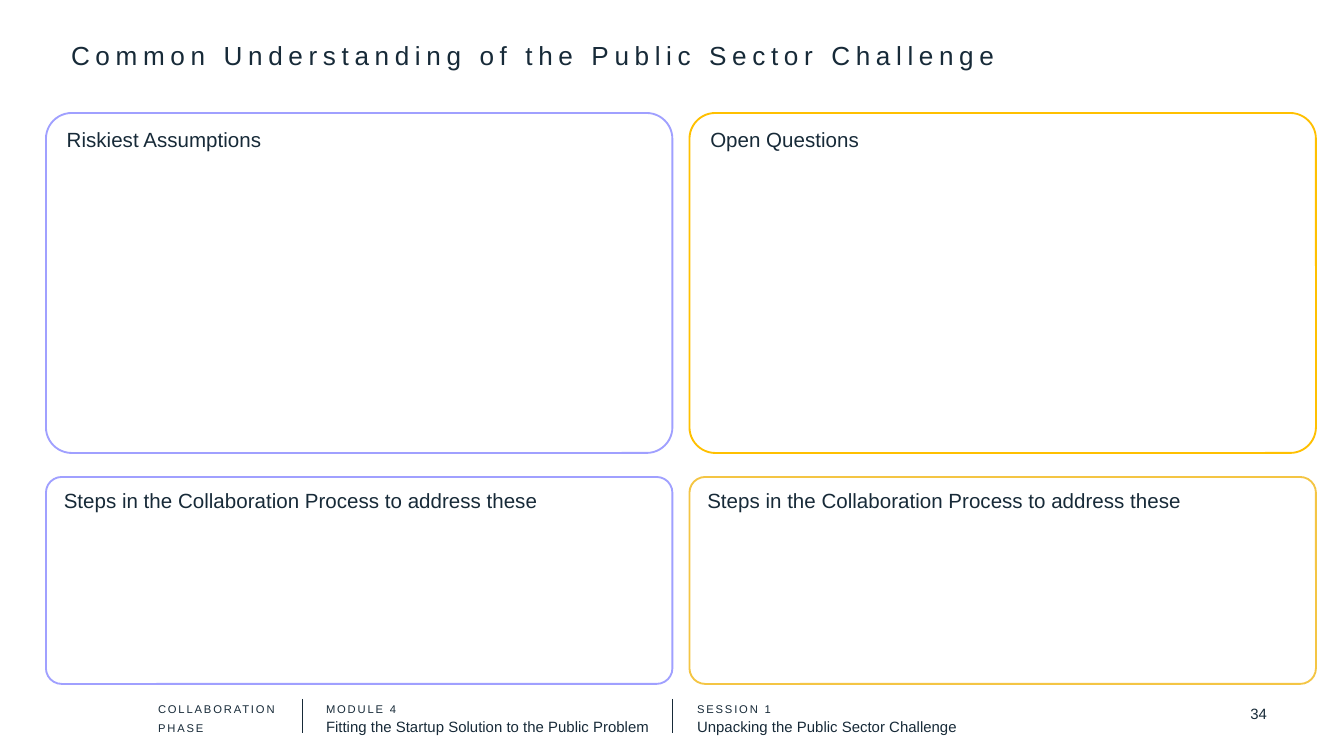
from dataclasses import dataclass

from lxml import etree
from pptx import Presentation
from pptx.dml.color import RGBColor
from pptx.enum.shapes import MSO_CONNECTOR, MSO_SHAPE
from pptx.enum.text import MSO_ANCHOR, PP_ALIGN
from pptx.oxml.ns import qn
from pptx.util import Pt

LINE = MSO_CONNECTOR.STRAIGHT
ROUND = MSO_SHAPE.ROUNDED_RECTANGLE
TOP, MIDDLE = MSO_ANCHOR.TOP, MSO_ANCHOR.MIDDLE
LEFT, RIGHT = PP_ALIGN.LEFT, PP_ALIGN.RIGHT
WIDE, HIGH = 1344, 756


@dataclass(frozen=True)
class Theme:
    font: str = "Arial"
    ink: str = "172A38"
    violet: str = "A0A0FF"
    amber: str = "FFC000"
    gold: str = "F4C544"
    title: int = 14
    card: int = 11
    small: int = 8
    label: int = 6


THEME = Theme()


def emu(px):
    return round(px * 9144000 / WIDE)


def color(code):
    return RGBColor.from_string(code)


def style(para, text, size, track=0, lead=None, align=LEFT):
    """Fill one paragraph; track is letter spacing and lead line height, in points."""
    run = para.add_run()
    run.text = text
    if track:
        run.font._element.set("spc", str(track * 100))
    para.alignment = align
    if lead:
        para.line_spacing = Pt(lead)
    font = para.font
    font.name, font.size = THEME.font, Pt(size)
    font.color.rgb = color(THEME.ink)


def add_text(slide, box, rows, lead=None, align=LEFT, anchor=TOP):
    """Add a text box; each row is (text, size, track)."""
    frame = slide.shapes.add_textbox(*map(emu, box)).text_frame
    frame.word_wrap = True
    frame.vertical_anchor = anchor
    frame.margin_left = frame.margin_right = emu(13)
    frame.margin_top = frame.margin_bottom = emu(13)
    for i, (text, size, track) in enumerate(rows):
        para = frame.add_paragraph() if i else frame.paragraphs[0]
        style(para, text, size, track, lead, align)


def add_rule(slide, x, y, high):
    rule = slide.shapes.add_connector(LINE, emu(x), emu(y), emu(x), emu(y + high))
    rule.line.color.rgb = color(THEME.ink)
    rule.line.width = Pt(0.5)
    etree.SubElement(rule._element.spPr, qn("a:effectLst"))


def add_card(slide, box, text, edge):
    card = slide.shapes.add_shape(ROUND, *map(emu, box))
    card.adjustments[0] = 0.076
    card.shadow.inherit = False
    card.fill.background()
    card.line.color.rgb = color(edge)
    card.line.width = Pt(1)
    frame = card.text_frame
    frame.word_wrap = True
    frame.vertical_anchor = TOP
    style(frame.paragraphs[0], text, THEME.card)


def add_board(slide, box):
    """Two columns of cards: a tall one above a short one."""
    x, y, wide, high = box
    gap, drop, tall = 17, 24, 340
    span = (wide - gap) / 2
    steps = "Steps in the Collaboration Process to address these"
    columns = [
        ("Riskiest Assumptions", THEME.violet, THEME.violet),
        ("Open Questions", THEME.amber, THEME.gold),
    ]
    for i, (head, upper, lower) in enumerate(columns):
        left = x + i * (span + gap)
        add_card(slide, (left, y, span, tall), head, upper)
        below = tall + drop
        add_card(slide, (left, y + below, span, high - below), steps, lower)


def add_footer(slide, box):
    x, y, wide, high = box
    label, small = THEME.label, THEME.small
    phase = [("COLLABORATION", label, 1), ("PHASE", label, 1)]
    add_text(slide, (x, y + 1, 155, high), phase, lead=10.2)
    parts = [
        (168, 446, "MODULE 4", "Fitting the Startup Solution to the Public Problem"),
        (539, 402, "SESSION 1", "Unpacking the Public Sector Challenge"),
    ]
    for left, span, head, text in parts:
        add_rule(slide, x + left - 11, y + 16, 34)
        rows = [(head, label, 1), (text, small, 0)]
        add_text(slide, (x + left, y, span, high), rows, lead=10.6)
    page = (x + wide - 138, y + 11, 138, 40)
    add_text(slide, page, [("34", small, 0)], align=RIGHT, anchor=MIDDLE)


def main():
    deck = Presentation()
    deck.slide_width, deck.slide_height = emu(WIDE), emu(HIGH)
    slide = deck.slides.add_slide(deck.slide_layouts[6])
    add_footer(slide, (145, 683, 1135, 63))
    title = "Common Understanding of the Public Sector Challenge"
    add_text(slide, (58, 26, 1218, 64), [(title, THEME.title, 3)])
    add_board(slide, (46, 113, 1270, 571))
    deck.save("out.pptx")


if __name__ == "__main__":
    main()
